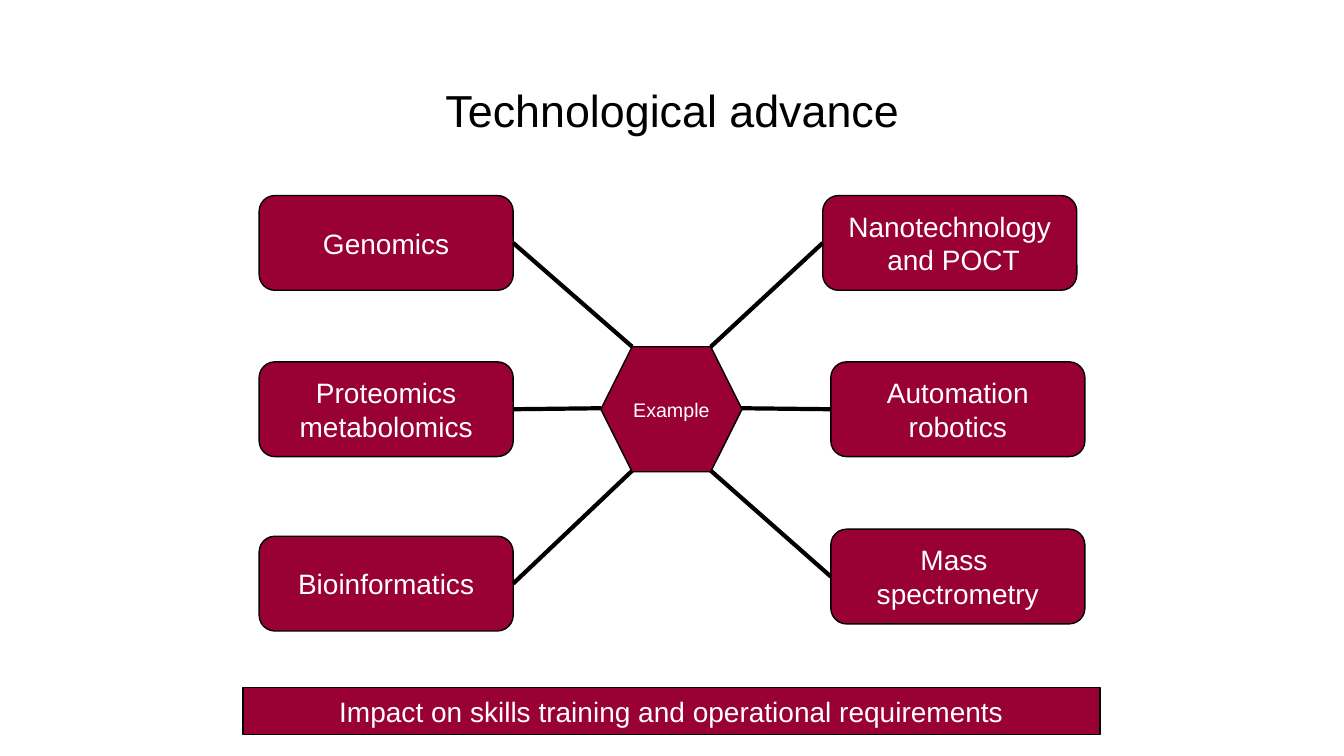
"""Build the technological advance slide: six topics around a hexagon."""
from dataclasses import dataclass

from pptx import Presentation
from pptx.dml import color
from pptx.enum import shapes, text
from pptx.oxml import ns, xmlchemy
from pptx.util import Inches, Pt

FONT, RED, BLACK, WHITE = "Arial", "990033", "000000", "FFFFFF"
SHAPE = shapes.MSO_SHAPE
WIDE, HIGH = 2.52, 0.94
LEFT, RIGHT = 3, 1


@dataclass
class Topic:
    label: str
    x: float
    y: float
    side: int
    hub_x: float
    hub_y: float


TOPICS = [
    Topic("Nanotechnology\n and POCT", 8.16, 1.94, RIGHT, 7.05, 3.44),
    Topic("Automation\nrobotics", 8.24, 3.59, RIGHT, 7.35, 4.05),
    Topic("Mass \nspectrometry", 8.24, 5.25, RIGHT, 7.05, 4.67),
    Topic("Genomics", 2.57, 1.94, LEFT, 6.27, 3.44),
    Topic("Proteomics\nmetabolomics", 2.57, 3.59, LEFT, 5.96, 4.05),
    Topic("Bioinformatics", 2.57, 5.32, LEFT, 6.27, 4.67),
]


def rgb(code: str) -> color.RGBColor:
    """Turn a hex string into a colour."""
    return color.RGBColor.from_string(code)


def write(shape, words: str, size: int, ink: str) -> None:
    """Put centred text in a shape."""
    frame = shape.text_frame
    frame.word_wrap = True
    frame.vertical_anchor = text.MSO_ANCHOR.MIDDLE
    frame.text = words
    for para in frame.paragraphs:
        para.alignment = text.PP_ALIGN.CENTER
        para.font.name = FONT
        para.font.size = Pt(size)
        para.font.color.rgb = rgb(ink)


def block(slide, kind, box: tuple, words: str, size: int = 20):
    """Draw a red labelled shape with a thin black outline."""
    shape = slide.shapes.add_shape(kind, *map(Inches, box))
    shape.shadow.inherit = False
    shape.fill.solid()
    shape.fill.fore_color.rgb = rgb(RED)
    shape.line.color.rgb = rgb(BLACK)
    shape.line.width = Pt(1)
    write(shape, words, size, WHITE)
    return shape


def spoke(slide, shape, topic: Topic) -> None:
    """Join a topic box to the hexagon."""
    end = Inches(topic.hub_x), Inches(topic.hub_y)
    line = slide.shapes.add_connector(shapes.MSO_CONNECTOR.STRAIGHT, *end, *end)
    line.begin_connect(shape, topic.side)
    line.line.color.rgb = rgb(BLACK)
    line.line.width = Pt(3)
    line._element.spPr.append(xmlchemy.OxmlElement("a:effectLst"))


def main() -> None:
    """Build and save the slide."""
    deck = Presentation()
    deck.slide_width, deck.slide_height = Inches(13.33), Inches(7.5)
    slide = deck.slides.add_slide(deck.slide_layouts[6])

    title = slide.shapes.add_textbox(*map(Inches, (0.92, 0.4, 11.5, 1.45)))
    write(title, "Technological advance", 32, BLACK)
    title.text_frame.paragraphs[0].line_spacing = 0.9

    block(slide, SHAPE.HEXAGON, (5.96, 3.44, 1.4, 1.24), "Example", 14)
    for topic in TOPICS:
        box = (topic.x, topic.y, WIDE, HIGH)
        shape = block(slide, SHAPE.ROUNDED_RECTANGLE, box, topic.label)
        spoke(slide, shape, topic)
    block(slide, SHAPE.RECTANGLE, (2.41, 6.82, 8.5, 0.47),
          "Impact on skills training and operational requirements")
    deck.save("out.pptx")


if __name__ == "__main__":
    main()
